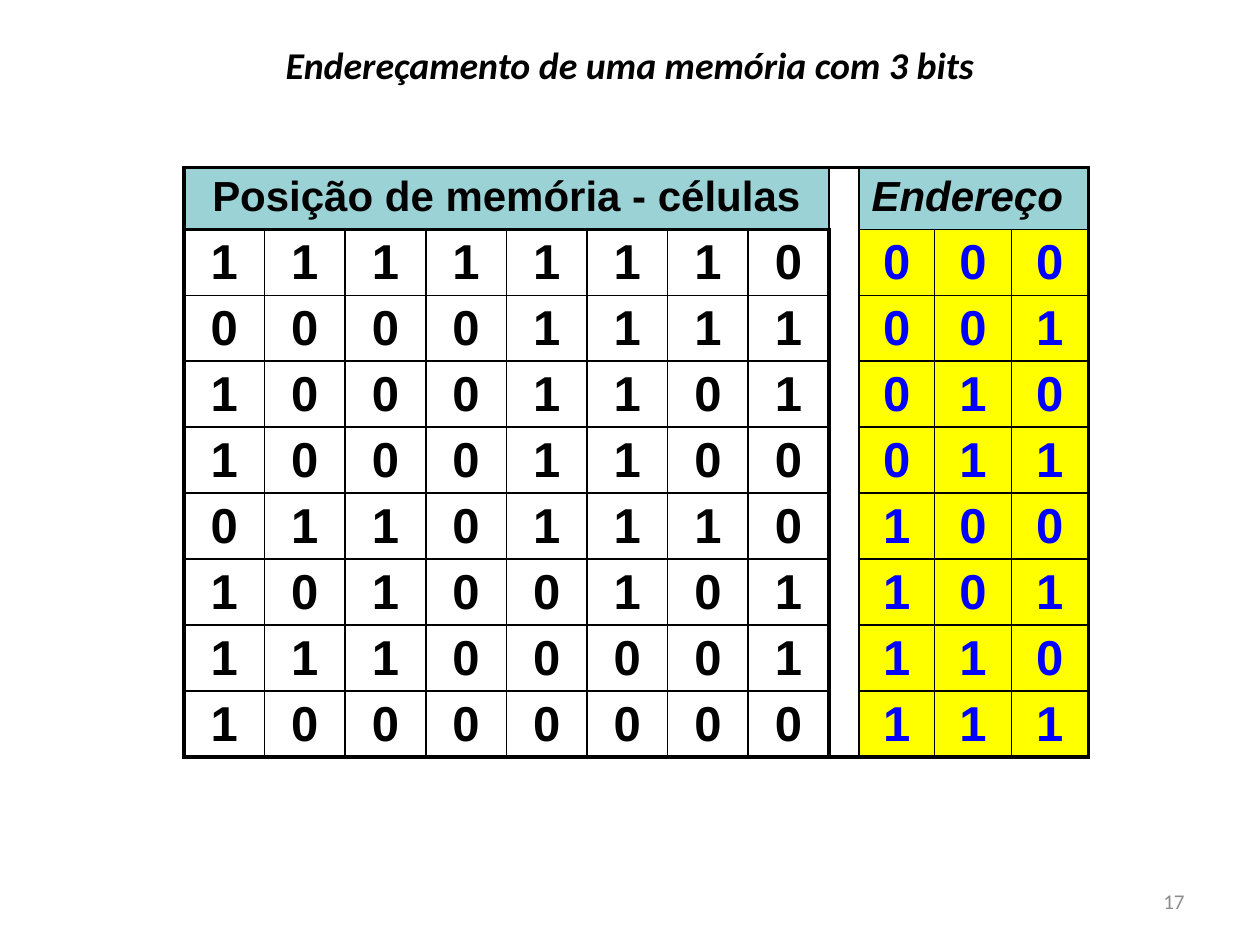
import pptx
import pptx.dml.color
import pptx.enum.text
import pptx.util
from lxml import etree
from pptx.oxml.ns import qn
from pptx.util import Inches

ALIGN = pptx.enum.text.PP_ALIGN
MIDDLE = pptx.enum.text.MSO_ANCHOR.MIDDLE

MEMORY_WORDS = ["11111110", "00001111", "10001101", "10001100",
                "01101110", "10100101", "11100001", "10000000"]
WORD_BITS = 8
GAP_COLUMN = WORD_BITS
ADDRESS_COLUMN = GAP_COLUMN + 1
COLUMN_WIDTHS = [0.64] * WORD_BITS + [0.23, 0.6, 0.61, 0.61]
ROW_HEIGHT = 0.49
LAST_ROW = len(MEMORY_WORDS)
LAST_COLUMN = len(COLUMN_WIDTHS) - 1


def color(hex_value):
    return pptx.dml.color.RGBColor.from_string(hex_value)


class SlideBuilder:
    text_font = "Calibri"
    table_font = "Arial"
    ink = "000000"
    muted = "8C8C8C"
    header_fill = "9AD2D6"
    address_fill = "FFFF00"
    address_ink = "0000FF"
    gap_fill = "FFFFFF"
    thin, thick = 1, 2.25

    def __init__(self, presentation):
        self.slide = presentation.slides.add_slide(presentation.slide_layouts[5])

    def format(self, paragraph, size, font, ink, align, bold=False, italic=False):
        paragraph.alignment = align
        paragraph.font.size = pptx.util.Pt(size)
        paragraph.font.name = font
        paragraph.font.color.rgb = color(ink)
        paragraph.font.bold = bold
        paragraph.font.italic = italic

    def title(self, text, left, top, width, height):
        heading = self.slide.shapes.title
        heading.left, heading.top = Inches(left), Inches(top)
        heading.width, heading.height = Inches(width), Inches(height)
        heading.text_frame.text = text
        heading.text_frame.vertical_anchor = MIDDLE
        self.format(heading.text_frame.paragraphs[0], 21.6, self.text_font,
                    self.ink, ALIGN.CENTER, bold=True, italic=True)

    def page_number(self, text, left, top, width, height):
        number = self.slide.shapes.add_textbox(
            Inches(left), Inches(top), Inches(width), Inches(height))
        number.text_frame.word_wrap = True
        number.text_frame.vertical_anchor = MIDDLE
        number.text_frame.text = text
        self.format(number.text_frame.paragraphs[0], 12, self.text_font,
                    self.muted, ALIGN.RIGHT)

    def cell_text(self, cell, text, size, ink, align=ALIGN.CENTER, italic=False):
        cell.text = text
        paragraph = cell.text_frame.paragraphs[0]
        self.format(paragraph, size, self.table_font, ink, align, True, italic)
        properties = paragraph._p.get_or_add_pPr()
        spacing = etree.Element(qn("a:spcBef"))
        etree.SubElement(spacing, qn("a:spcPct"), val="20000")
        properties.insert(0, spacing)

    def cell_fill(self, cell, fill):
        if fill is None:
            cell.fill.background()
        else:
            cell.fill.solid()
            cell.fill.fore_color.rgb = color(fill)

    def cell_borders(self, cell, row, column):
        last_row = row + cell.span_height - 1
        last_column = column + cell.span_width - 1
        in_word = column < GAP_COLUMN
        thick_sides = {
            "a:lnL": column == 0,
            "a:lnR": last_column == LAST_COLUMN
            or (last_column == GAP_COLUMN - 1 and row > 0),
            "a:lnT": row == 0 or (row == 1 and in_word),
            "a:lnB": last_row == LAST_ROW or (row == 0 and in_word),
        }
        properties = cell._tc.get_or_add_tcPr()
        for position, (side, is_thick) in enumerate(thick_sides.items()):
            width = pptx.util.Pt(self.thick if is_thick else self.thin)
            line = etree.Element(qn(side), w=str(int(width)))
            fill = etree.SubElement(line, qn("a:solidFill"))
            etree.SubElement(fill, qn("a:srgbClr"), val=self.ink)
            properties.insert(position, line)

    def memory_table(self, left, top):
        table = self.slide.shapes.add_table(
            LAST_ROW + 1, LAST_COLUMN + 1, Inches(left), Inches(top),
            Inches(sum(COLUMN_WIDTHS)), Inches(ROW_HEIGHT * (LAST_ROW + 1))).table
        table.first_row = False
        table.horz_banding = False
        for column, width in zip(table.columns, COLUMN_WIDTHS):
            column.width = Inches(width)
        for row in table.rows:
            row.height = Inches(ROW_HEIGHT)

        table.cell(0, 0).merge(table.cell(0, GAP_COLUMN - 1))
        table.cell(0, GAP_COLUMN).merge(table.cell(LAST_ROW, GAP_COLUMN))
        table.cell(0, ADDRESS_COLUMN).merge(table.cell(0, LAST_COLUMN))

        self.cell_text(table.cell(0, 0), "Posição de memória - células", 24, self.ink)
        self.cell_text(table.cell(0, ADDRESS_COLUMN), "Endereço", 24, self.ink,
                       ALIGN.LEFT, italic=True)
        for address, word in enumerate(MEMORY_WORDS):
            for column, bit in enumerate(word):
                self.cell_text(table.cell(address + 1, column), bit, 28, self.ink)
            for column, bit in enumerate(f"{address:03b}", ADDRESS_COLUMN):
                self.cell_text(table.cell(address + 1, column), bit, 28,
                               self.address_ink)

        for row in range(LAST_ROW + 1):
            for column in range(LAST_COLUMN + 1):
                cell = table.cell(row, column)
                cell.margin_top, cell.margin_bottom = Inches(0.05), Inches(0.04)
                if column == GAP_COLUMN:
                    fill = self.gap_fill
                elif row == 0:
                    fill = self.header_fill
                else:
                    fill = self.address_fill if column > GAP_COLUMN else None
                self.cell_fill(cell, fill)
                if not cell.is_spanned:
                    self.cell_borders(cell, row, column)


def main():
    presentation = pptx.Presentation()
    presentation.slide_width = Inches(10)
    presentation.slide_height = Inches(7.5)
    builder = SlideBuilder(presentation)
    builder.title("Endereçamento de uma memória com 3 bits", 0.5, 0.28, 9, 0.46)
    builder.memory_table(1.46, 1.33)
    builder.page_number("17", 7.17, 6.95, 2.33, 0.4)
    presentation.save("out.pptx")


if __name__ == "__main__":
    main()
